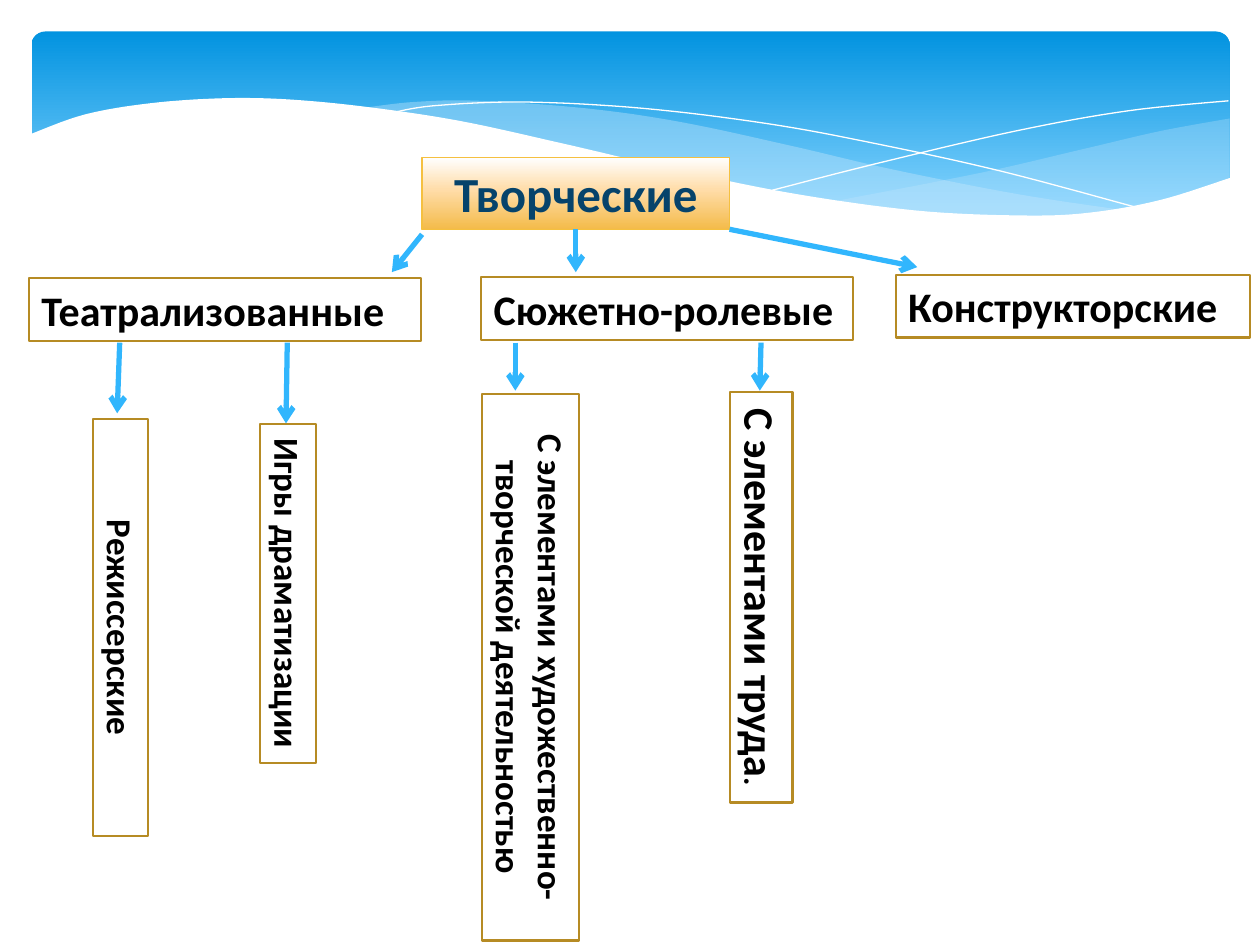
from copy import deepcopy
from lxml.etree import SubElement
from pptx import Presentation
from pptx.dml.color import RGBColor
from pptx.enum.shapes import MSO_CONNECTOR as Link, MSO_SHAPE as Preset
from pptx.enum.text import MSO_ANCHOR as Anchor, MSO_AUTO_SIZE as Fit, PP_ALIGN as Align
from pptx.oxml.ns import qn
from pptx.util import Inches, Pt

COLORS = {
    "sky": "0293E0", "light sky": "83D3FE", "wave": "C6E7FC", "white": "FFFFFF",
    "peach": "FFDDAA", "amber": "F4BB4A", "title line": "F5C040", "title": "06436B",
    "box line": "B68B24", "text": "000000", "arrow": "31B6FD",
}
RGB = {name: RGBColor.from_string(value) for name, value in COLORS.items()}

deck = Presentation()
deck.slide_width, deck.slide_height = Inches(10), Inches(7.5)
cell = deck.slide_width // 10  # grid of 10 columns by 7.5 rows
page = deck.slides.add_slide(deck.slide_layouts[5])


def gradient(shape, stops):
    """Fill a shape from top to bottom with (position, colour name) stops."""
    shape.fill.gradient()
    shape.fill.gradient_angle = 270
    stop_list = shape.fill._fill._gradFill.find(qn("a:gsLst"))
    for _ in stops[2:]:
        stop_list.append(deepcopy(stop_list[-1]))
    for stop, (position, color) in zip(shape.fill.gradient_stops, stops):
        stop.position, stop.color.rgb = position, RGB[color]


def curve(knots, steps=8):
    """Points of a smooth curve through the knots (Catmull-Rom)."""
    ends = [knots[0], *knots, knots[-1]]
    points = [knots[0]]
    for a, b, c, d in zip(ends, ends[1:], ends[2:], ends[3:]):
        for step in range(1, steps + 1):
            t = step / steps
            points.append(tuple(
                (2 * q + (r - p) * t + (2 * p - 5 * q + 4 * r - s) * t ** 2
                 + (3 * q - p - 3 * r + s) * t ** 3) / 2
                for p, q, r, s in zip(a, b, c, d)))
    return points


# Blue header panel
panel = page.shapes.add_shape(Preset.ROUNDED_RECTANGLE, *[
    int(n * cell) for n in (0.25, 0.25, 9.51, 1.56)])
panel.adjustments[0] = 0.07
panel.shadow.inherit = False
panel.line.fill.background()
gradient(panel, [(0, "sky"), (0.9, "light sky")])

# Waves: outline, fill colour, opacity in percent; no fill means a thin white line
right_wave = (curve([(9.76, 0.94), (9.21, 1.04), (8.61, 1.18), (7.79, 1.37), (6.61, 1.6)])
              + curve([(6.61, 1.6), (7.32, 1.68), (8.14, 1.72), (8.81, 1.67),
                       (9.35, 1.56), (9.76, 1.41)]))
middle_wave = (curve([(8.93, 1.67), (8.07, 1.54), (7.06, 1.34), (6.29, 1.16), (5.41, 0.97),
                      (4.65, 0.86), (3.8, 0.8), (3.28, 0.81), (2.86, 0.86)])
               + curve([(2.86, 0.86), (3.62, 0.97), (4.49, 1.16), (5.66, 1.43), (6.5, 1.58),
                        (7.36, 1.69), (8.18, 1.73), (8.93, 1.67)]))
long_line = curve([(3.09, 0.9), (3.44, 0.84), (4.16, 0.81), (5.1, 0.86), (6.08, 0.98),
                   (6.95, 1.14), (7.95, 1.36), (9.07, 1.66)])
short_line = curve([(6.13, 1.51), (6.95, 1.3), (8.06, 1.04), (8.95, 0.88), (9.75, 0.8)])
lower_edge = curve([(9.77, 1.41), (9.2, 1.59), (8.63, 1.69), (8.09, 1.71), (7.26, 1.67),
                    (6.26, 1.53), (5.29, 1.33), (4.47, 1.14), (3.65, 0.96), (2.92, 0.85),
                    (2.3, 0.79), (1.77, 0.78), (1.19, 0.82), (0.67, 0.91), (0.23, 1.07)])
for outline, color, opacity in [
    (right_wave, "wave", 29),
    (middle_wave, "wave", 40),
    (long_line, None, 100),
    (short_line, None, 100),
    (lower_edge + [(0.23, 2.24), (9.77, 2.24)], "white", 100),
]:
    points = [(round(x * cell), round(y * cell)) for x, y in outline]
    builder = page.shapes.build_freeform(*points[0])
    builder.add_line_segments(points[1:], close=color is not None)
    wave = builder.convert_to_shape()
    wave.shadow.inherit = False
    if color:
        wave.fill.solid()
        wave.fill.fore_color.rgb = RGB[color]
        wave.line.fill.background()
        tint = wave.fill._xPr.find(qn("a:solidFill"))[0]
        SubElement(tint, qn("a:alpha")).set("val", str(opacity * 1000))
    else:
        wave.fill.background()
        wave.line.color.rgb = RGB["white"]
        wave.line.width = 0

# Title, brought in front of the header
title = page.shapes.title
title.left, title.top, title.width, title.height = [
    int(n * cell) for n in (3.35, 1.25, 2.44, 0.57)]
page.shapes._spTree.append(title._element)
gradient(title, [(0, "white"), (0.44, "peach"), (1, "amber")])
title.line.color.rgb, title.line.width = RGB["title line"], Pt(0.75)
title.text_frame.vertical_anchor = Anchor.TOP
title.text_frame.auto_size = Fit.NONE
para = title.text_frame.paragraphs[0]
para.alignment = Align.CENTER
span = para.add_run()
span.text = "Творческие"
for name, value in {"name": "Calibri", "size": Pt(28), "bold": True}.items():
    setattr(span.font, name, value)
span.font.color.rgb = RGB["title"]

# Kinds of games: place before turning, rotation, wrapping, runs of (text, size)
for place, turn, wrap, spans in [
    ((-0.7, 4.76, 3.31, 0.44), 90, True, [("Режиссерские", 20)]),
    ((2.04, 4.91, 4.34, 0.77), 90, True,
     [("С элементами художественно-творческой деятельностью", 20)]),
    ((0.23, 2.21, 3.11, 0.5), 0, True, [("Театрализованные", 24)]),
    ((3.82, 2.2, 2.95, 0.5), 0, False, [("Сюжетно-ролевые", 24)]),
    ((7.11, 2.18, 2.81, 0.5), 0, False, [("Конструкторские", 24)]),
    ((0.94, 4.49, 2.69, 0.44), 90, False, [("Игры драматизации", 20)]),
    ((4.41, 4.49, 3.26, 0.5), 90, False, [("С элементами труда", 24), (".", 18)]),
]:
    box = page.shapes.add_textbox(*[int(n * cell) for n in place])
    box.rotation = turn
    box.fill.solid()
    box.fill.fore_color.rgb = RGB["white"]
    box.line.color.rgb, box.line.width = RGB["box line"], Pt(1.25)
    box.text_frame.word_wrap = wrap
    box.text_frame.auto_size = Fit.SHAPE_TO_FIT_TEXT
    para = box.text_frame.paragraphs[0]
    para.alignment = Align.CENTER if turn else Align.LEFT
    for text, size in spans:
        span = para.add_run()
        span.text = text
        for name, value in {"name": "Calibri", "size": Pt(size), "bold": True}.items():
            setattr(span.font, name, value)
        span.font.color.rgb = RGB["text"]

# Arrows from each box to its kinds
for ends in [
    (3.35, 1.86, 3.11, 2.16), (4.57, 1.82, 4.57, 2.16), (5.79, 1.82, 7.28, 2.12),
    (0.95, 2.72, 0.93, 3.28), (2.28, 2.72, 2.27, 3.36),
    (4.09, 2.72, 4.09, 3.1), (6.04, 2.72, 6.03, 3.1),
]:
    arrow = page.shapes.add_connector(Link.STRAIGHT, *[int(n * cell) for n in ends])
    arrow.line.color.rgb, arrow.line.width = RGB["arrow"], Pt(3)
    SubElement(arrow.line._get_or_add_ln(), qn("a:tailEnd")).set("type", "arrow")
    SubElement(arrow._element.spPr, qn("a:effectLst"))

deck.save("out.pptx")
